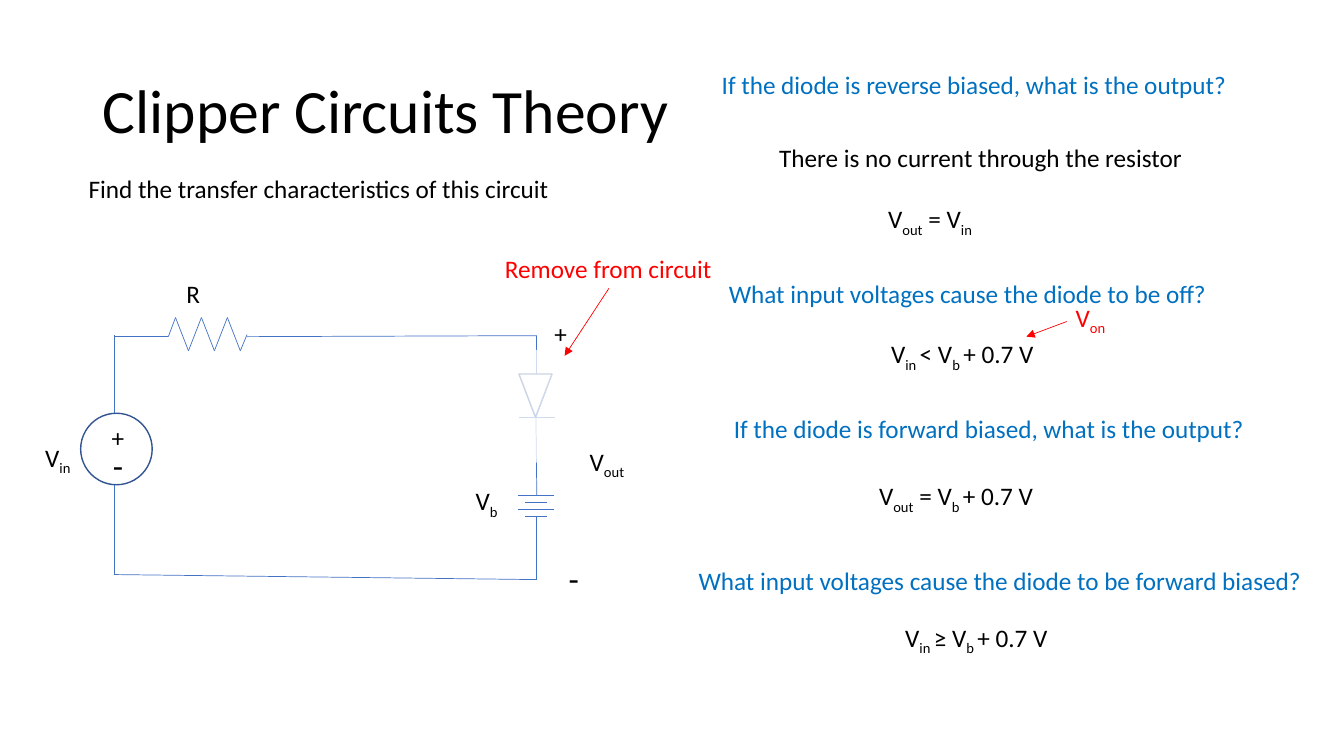
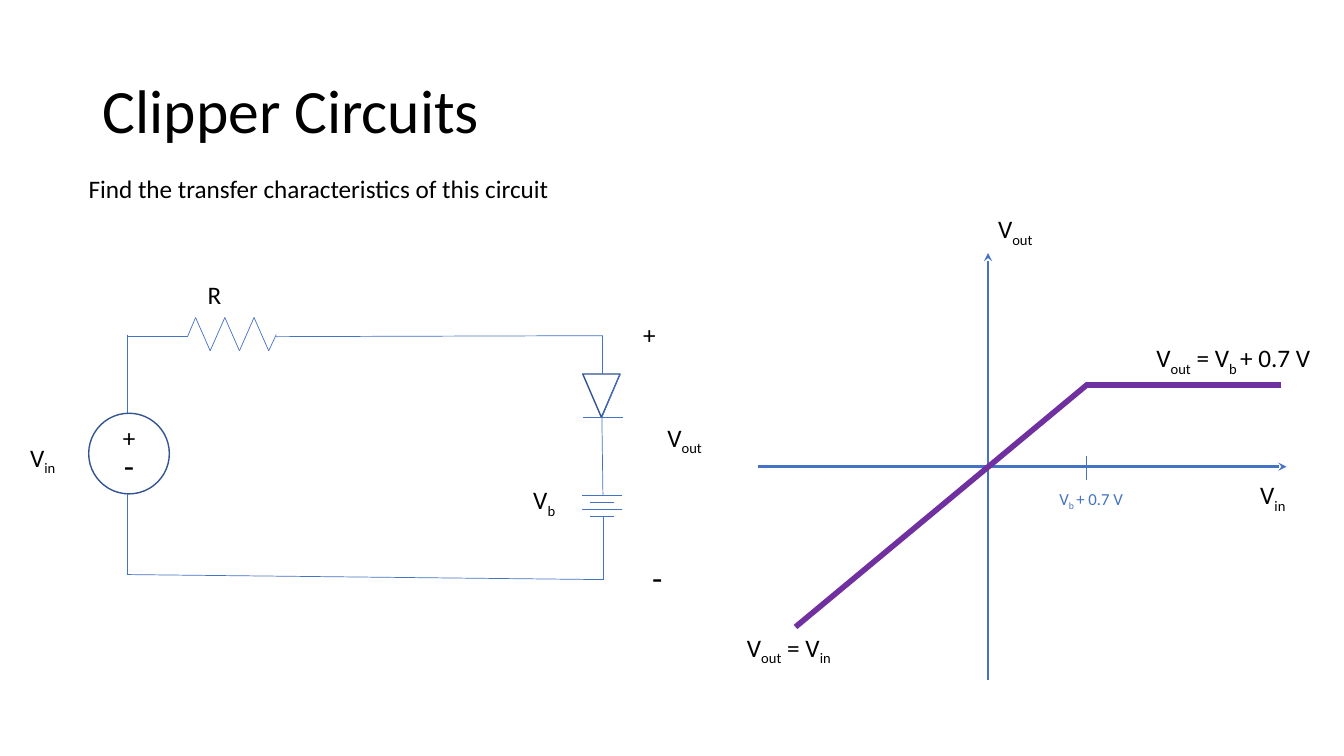
from dataclasses import dataclass
from itertools import pairwise

from lxml.etree import SubElement
from pptx import Presentation
from pptx.dml.color import RGBColor
from pptx.enum.shapes import MSO_CONNECTOR, MSO_SHAPE
from pptx.enum.text import MSO_ANCHOR, MSO_AUTO_SIZE
from pptx.oxml.ns import qn
from pptx.util import Inches, Pt

BLACK = RGBColor(0x00, 0x00, 0x00)
WHITE = RGBColor(0xFF, 0xFF, 0xFF)
WIRE_BLUE = RGBColor(0x44, 0x72, 0xC4)
OUTLINE_BLUE = RGBColor(0x32, 0x54, 0x91)
QUESTION_BLUE = RGBColor(0x00, 0x70, 0xC0)
NOTE_RED = RGBColor(0xFF, 0x00, 0x00)
CURVE_PURPLE = RGBColor(0x70, 0x30, 0xA0)
FONT = "Calibri"
BLANK_LAYOUT = 6


@dataclass(frozen=True)
class Label:
    """Text at a place in inches; parts between tildes are subscripts."""
    text: str
    left: float
    top: float
    width: float
    height: float = 0.4
    size: float = 18
    color: RGBColor = BLACK
    wrap: bool = True


@dataclass(frozen=True)
class Line:
    """A straight line between two points in inches."""
    start: tuple[float, float]
    end: tuple[float, float]
    color: RGBColor = WIRE_BLUE
    width: float = 0.5
    arrowhead: str = ""


@dataclass(frozen=True)
class Circuit:
    """Horizontal scale and shift of the circuit, and its labels."""
    scale: float
    shift: float
    labels: tuple[Label, ...]

    def x(self, position: float) -> float:
        return self.shift + self.scale * position


THEORY_CIRCUIT = Circuit(0.887, 0.02, (
    Label("+", 1.01, 4.14, 0.32),
    Label("-", 1.02, 4.36, 0.32, 0.5, 24),
    Label("V~in~", 0.35, 4.34, 0.63),
    Label("R", 1.75, 2.71, 0.63),
    Label("V~out~", 5.75, 4.38, 0.63),
    Label("-", 5.54, 5.49, 0.32, 0.5, 24),
    Label("+", 5.4, 3.11, 0.32),
    Label("V~b~", 4.62, 4.77, 0.63),
))

RESULT_CIRCUIT = Circuit(1, 0, (
    Label("+", 1.12, 4.14, 0.36),
    Label("-", 1.13, 4.36, 0.36, 0.5, 24),
    Label("V~in~", 0.2, 4.34, 0.71),
    Label("R", 1.96, 2.72, 0.71),
    Label("V~out~", 6.52, 4.14, 0.71),
    Label("-", 6.37, 5.48, 0.36, 0.5, 24),
    Label("+", 6.28, 3.12, 0.36),
    Label("V~b~", 5.19, 4.76, 0.71),
))

QUESTIONS_AND_ANSWERS = (
    Label("If the diode is reverse biased, what is the output?",
          7.06, 0.64, 5.76, color=QUESTION_BLUE),
    Label("There is no current through the resistor", 7.63, 1.36, 5.13),
    Label("V~out~ = V~in~", 8.71, 1.97, 1.49),
    Label("What input voltages cause the diode to be off?",
          7.13, 2.71, 5.81, color=QUESTION_BLUE),
    Label("V~in ~< V~b ~+ 0.7 V", 8.74, 3.31, 1.84, wrap=False),
    Label("If the diode is forward biased, what is the output?",
          7.18, 4.05, 5.76, color=QUESTION_BLUE),
    Label("V~out~ = V~b ~+ 0.7 V", 8.62, 4.72, 2.1),
    Label("What input voltages cause the diode to be forward biased?",
          6.83, 5.56, 6.23, color=QUESTION_BLUE),
    Label("V~in ~≥ V~b ~+ 0.7 V", 8.88, 6.12, 1.84, wrap=False),
)

RED_NOTES = (
    Label("V~on~", 10.57, 2.95, 0.51, color=NOTE_RED, wrap=False),
    Label("Remove from circuit", 4.91, 2.46, 2.27, color=NOTE_RED, wrap=False),
)
RED_ARROWS = (
    Line((10.58, 3.19), (10.18, 3.34), NOTE_RED, arrowhead="triangle"),
    Line((6.04, 2.86), (5.6, 3.53), NOTE_RED, arrowhead="triangle"),
)

TRANSFER_LINES = (
    Line((7.52, 4.63), (12.76, 4.63), width=1.75, arrowhead="stealth"),
    Line((9.8, 6.75), (9.8, 2.51), width=1.75, arrowhead="stealth"),
    Line((10.77, 3.82), (12.71, 3.82), CURVE_PURPLE, 4),
    Line((7.89, 6.22), (10.79, 3.81), CURVE_PURPLE, 4),
    Line((10.77, 4.52), (10.77, 4.76)),
)
TRANSFER_LABELS = (
    Label("V~out~", 9.8, 2.07, 1.15),
    Label("V~in~", 12.4, 4.71, 0.55),
    Label("V~out~ = V~in~", 7.31, 6.22, 1.49),
    Label("V~out~ = V~b ~+ 0.7 V", 11.37, 3.35, 2.1),
    Label("V~b ~+ 0.7 V", 10.41, 4.8, 0.97, 0.3, 12, WIRE_BLUE, False),
)


def add_label(shapes, label: Label):
    box = shapes.add_textbox(Inches(label.left), Inches(label.top),
                             Inches(label.width), Inches(label.height))
    frame = box.text_frame
    frame.word_wrap = label.wrap
    frame.auto_size = MSO_AUTO_SIZE.SHAPE_TO_FIT_TEXT
    paragraph = frame.paragraphs[0]
    paragraph.font.name = FONT
    paragraph.font.size = Pt(label.size)
    paragraph.font.color.rgb = label.color
    for index, part in enumerate(label.text.split("~")):
        if part:
            run = paragraph.add_run()
            run.text = part
            if index % 2:
                run._r.get_or_add_rPr().set("baseline", "-25000")
    return box


def add_line(shapes, line: Line) -> None:
    connector = shapes.add_connector(
        MSO_CONNECTOR.STRAIGHT, *map(Inches, line.start + line.end))
    connector.line.color.rgb = line.color
    connector.line.width = Pt(line.width)
    if line.arrowhead:
        SubElement(connector.line._get_or_add_ln(), qn("a:tailEnd"),
                   type=line.arrowhead)
    SubElement(connector._element.spPr, qn("a:effectLst"))


def add_outline(shapes, preset: MSO_SHAPE, left: float, top: float,
                width: float, height: float):
    """Add an unfilled circuit symbol."""
    symbol = shapes.add_shape(preset, Inches(left), Inches(top),
                              Inches(width), Inches(height))
    symbol.shadow.inherit = False
    symbol.fill.background()
    symbol.line.color.rgb = OUTLINE_BLUE
    symbol.line.width = Pt(1)
    return symbol


def add_circuit(slide, circuit: Circuit) -> None:
    shapes = slide.shapes.add_group_shape().shapes
    x = circuit.x
    diameter = 0.8 * circuit.scale
    add_outline(shapes, MSO_SHAPE.OVAL, x(0.88), 4.1, diameter, diameter)
    diode = add_outline(shapes, MSO_SHAPE.ISOSCELES_TRIANGLE,
                        x(5.78), 3.71, 0.37 * circuit.scale, 0.43)
    diode.rotation = 180

    peaks = [(1.94 + 0.145 * i, 3.48 if i % 2 else 3.15) for i in range(6)]
    resistor = [(1.86, 3.34), *peaks, (2.74, 3.32)]
    wires = [
        ((1.26, 3.32), (1.26, 4.1)),
        ((1.26, 4.1 + diameter), (1.26, 5.7)),
        ((1.26, 3.34), (1.86, 3.34)),
        *pairwise(resistor),
        ((2.74, 3.34), (5.98, 3.33)),
        ((1.26, 5.7), (5.98, 5.75)),
        ((5.97, 3.33), (5.97, 3.71)),
        ((6.15, 3.71), (5.97, 4.14)),
        ((6.18, 4.14), (5.78, 4.14)),
        ((5.97, 4.14), (5.98, 4.91)),
        ((5.98, 5.12), (5.98, 5.75)),
    ]
    for plate in range(4):
        half_width = 0.12 if plate % 2 else 0.2
        y = 4.91 + 0.07 * plate
        wires.append(((5.97 + half_width, y), (5.97 - half_width, y)))
    for (x1, y1), (x2, y2) in wires:
        add_line(shapes, Line((x(x1), y1), (x(x2), y2)))

    for label in circuit.labels:
        add_label(shapes, label)


def add_diode_veil(slide) -> None:
    """Fade the diode with a translucent white rectangle."""
    veil = slide.shapes.add_shape(MSO_SHAPE.RECTANGLE, Inches(4.99),
                                  Inches(3.47), Inches(0.79), Inches(1.12))
    veil.shadow.inherit = False
    veil.line.fill.background()
    veil.fill.solid()
    veil.fill.fore_color.rgb = WHITE
    color = veil._element.spPr.find(f"{qn('a:solidFill')}/{qn('a:srgbClr')}")
    SubElement(color, qn("a:alpha"), val="75000")


def add_circuit_slide(deck, title: str, title_width: float, circuit: Circuit):
    slide = deck.slides.add_slide(deck.slide_layouts[BLANK_LAYOUT])
    heading = add_label(slide.shapes,
                        Label(title, 0.92, 0.4, title_width, 1.45, 44))
    heading.text_frame.auto_size = MSO_AUTO_SIZE.NONE
    heading.text_frame.vertical_anchor = MSO_ANCHOR.MIDDLE
    heading.text_frame.paragraphs[0].line_spacing = 0.9
    add_circuit(slide, circuit)
    add_label(slide.shapes, Label(
        "Find the transfer characteristics of this circuit", 0.78, 1.67, 5.29))
    return slide


def main() -> None:
    deck = Presentation()
    deck.slide_width = Inches(13.33)
    deck.slide_height = Inches(7.5)

    theory = add_circuit_slide(deck, "Clipper Circuits Theory", 6.03,
                               THEORY_CIRCUIT)
    add_diode_veil(theory)
    for label in QUESTIONS_AND_ANSWERS + RED_NOTES:
        add_label(theory.shapes, label)
    for arrow in RED_ARROWS:
        add_line(theory.shapes, arrow)

    result = add_circuit_slide(deck, "Clipper Circuits", 11.5, RESULT_CIRCUIT)
    for line in TRANSFER_LINES:
        add_line(result.shapes, line)
    for label in TRANSFER_LABELS:
        add_label(result.shapes, label)

    deck.save("out.pptx")


if __name__ == "__main__":
    main()
